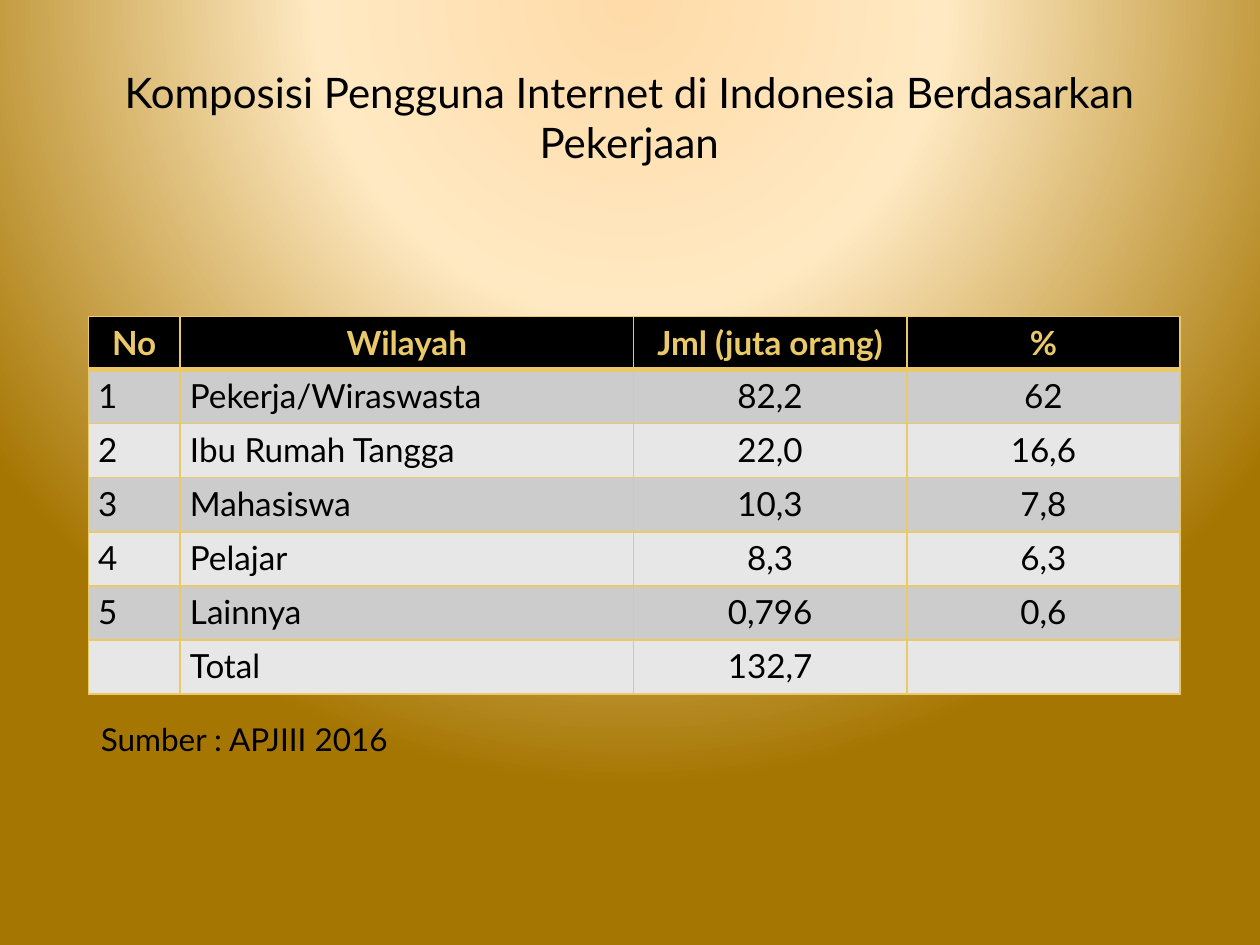
"""Build a slide with a table of Indonesian internet users by occupation."""
from lxml import etree
from pptx import Presentation
from pptx import util as u
from pptx.dml.color import RGBColor
from pptx.enum import text
from pptx.oxml import parse_xml
from pptx.oxml.ns import nsdecls

TITLE = "Komposisi Pengguna Internet di Indonesia Berdasarkan Pekerjaan"
NOTE = "Sumber : APJIII 2016"
ROWS = [
    ("No", "Wilayah", "Jml (juta orang)", "%"),
    ("1", "Pekerja/Wiraswasta", "82,2", "62"),
    ("2", "Ibu Rumah Tangga", "22,0", "16,6"),
    ("3", "Mahasiswa", "10,3", "7,8"),
    ("4", "Pelajar", "8,3", "6,3"),
    ("5", "Lainnya", "0,796", "0,6"),
    ("", "Total", "132,7", ""),
]
WIDTHS = [1.85, 9.14, 5.51, 5.51]
HEAD, ROW = 1.07, 1.09
STOPS = [(0, "FFDBA9"), (40, "FFE9C2"), (100, "A67602")]

BLACK = RGBColor(0, 0, 0)
GOLD = RGBColor(0xEA, 0xC9, 0x68)
BANDS = [RGBColor(0xE7, 0xE7, 0xE7), RGBColor(0xCC, 0xCC, 0xCC)]
MID = text.PP_ALIGN.CENTER
LEFT = text.PP_ALIGN.LEFT


def style(para, size, color=BLACK, bold=False, align=LEFT):
    para.alignment = align
    font = para.font
    for key, val in {"name": "Lato", "size": u.Pt(size), "bold": bold}.items():
        setattr(font, key, val)
    font.color.rgb = color


def place(shape, *box):
    for key, val in zip(("left", "top", "width", "height"), box):
        setattr(shape, key, u.Cm(val))


def edge(cell, side, width):
    cell._tc.get_or_add_tcPr().append(parse_xml(
        f'<a:ln{side} {nsdecls("a")} w="{u.Pt(width)}"><a:solidFill>'
        f'<a:srgbClr val="{GOLD}"/></a:solidFill></a:ln{side}>'))


def paint(slide):
    fill = slide.background.fill
    fill.solid()
    stops = "".join(f'<a:gs pos="{pos * 1000}"><a:srgbClr val="{hue}"/></a:gs>'
                    for pos, hue in STOPS)
    grad = parse_xml(
        f'<a:gradFill {nsdecls("a")} rotWithShape="1"><a:gsLst>{stops}</a:gsLst>'
        '<a:path path="circle"><a:fillToRect l="50000" t="-80000" '
        'r="50000" b="180000"/></a:path></a:gradFill>')
    props = slide._element.cSld.bg.bgPr
    props.replace(props[0], grad)


def add_grid(slide):
    high = HEAD + ROW * (len(ROWS) - 1)
    grid = slide.shapes.add_table(
        len(ROWS), len(WIDTHS), u.Cm(1.78), u.Cm(6.38),
        u.Cm(sum(WIDTHS)), u.Cm(high)).table
    for col, width in zip(grid.columns, WIDTHS):
        col.width = u.Cm(width)
    for r, row in enumerate(ROWS):
        top = r == 0
        grid.rows[r].height = u.Cm(HEAD if top else ROW)
        for c, word in enumerate(row):
            cell = grid.cell(r, c)
            cell.margin_left = cell.margin_right = u.Cm(0.2)
            for side in "LRTB":
                thick = (r, side) in ((0, "B"), (1, "T"))
                edge(cell, side, 3 if thick else 1)
            cell.fill.solid()
            cell.fill.fore_color.rgb = BLACK if top else BANDS[r % 2]
            cell.text = word
            style(cell.text_frame.paragraphs[0], 19, GOLD if top else BLACK,
                  top, MID if top or c > 1 else LEFT)


def main():
    deck = Presentation()
    deck.slide_width, deck.slide_height = u.Cm(25.4), u.Cm(19.05)
    slide = deck.slides.add_slide(deck.slide_layouts[1])
    paint(slide)

    title, note = slide.placeholders
    place(title, 1.57, 0.76, 22.23, 3.18)
    title.text = TITLE
    title.text_frame.vertical_anchor = text.MSO_ANCHOR.MIDDLE
    style(title.text_frame.paragraphs[0], 24, align=MID)

    add_grid(slide)

    place(note, 1.78, 14.38, 6.45, 1.02)
    note.text = NOTE
    frame = note.text_frame
    frame.word_wrap = False
    frame.auto_size = text.MSO_AUTO_SIZE.SHAPE_TO_FIT_TEXT
    para = frame.paragraphs[0]
    props = para._p.get_or_add_pPr()
    for key in ("marL", "indent"):
        props.set(key, "0")
    etree.SubElement(props, "{%s}buNone" % props.nsmap["a"])
    para.space_before, para.space_after = u.Pt(0), u.Pt(20)
    style(para, 18)

    deck.save("out.pptx")


if __name__ == "__main__":
    main()
